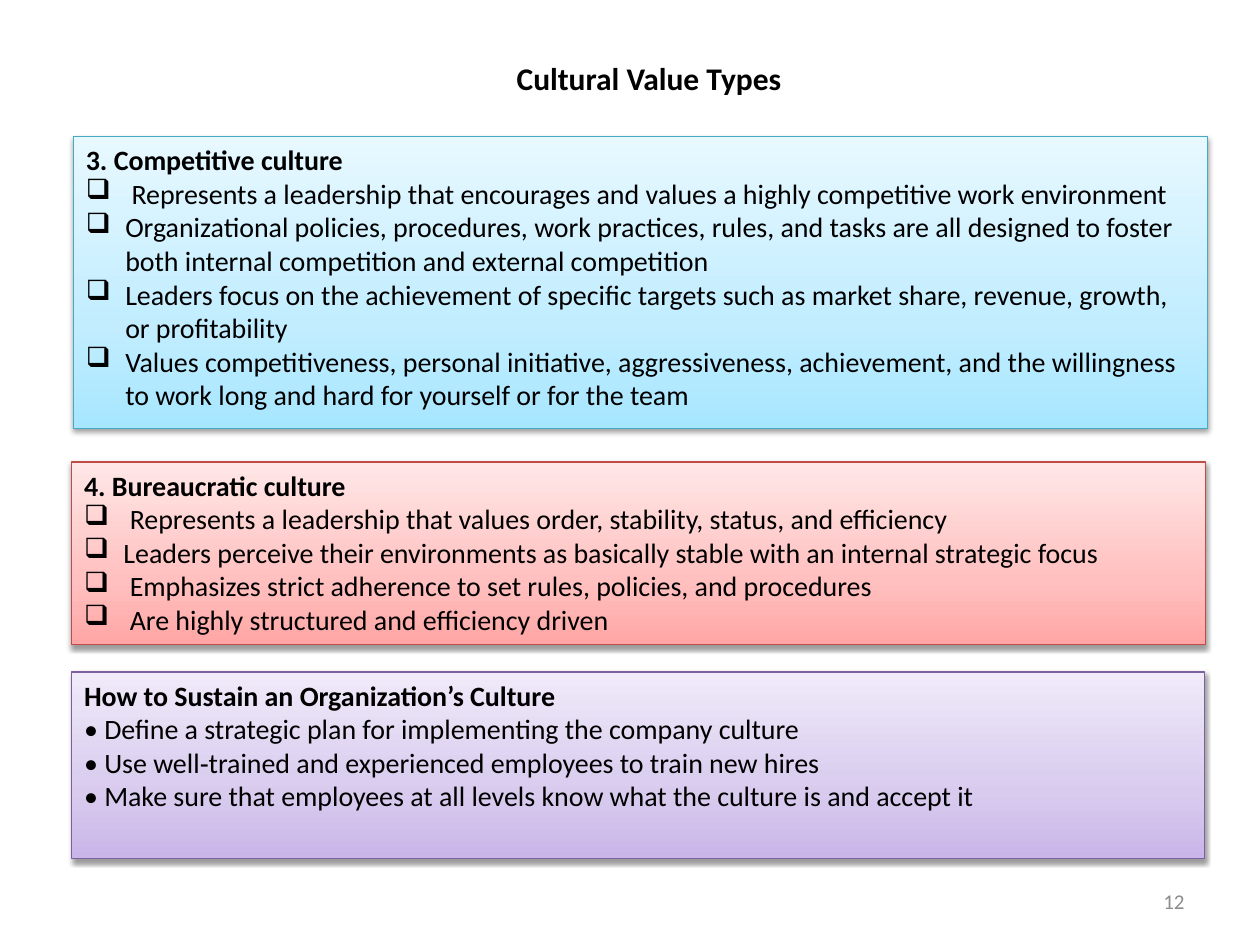
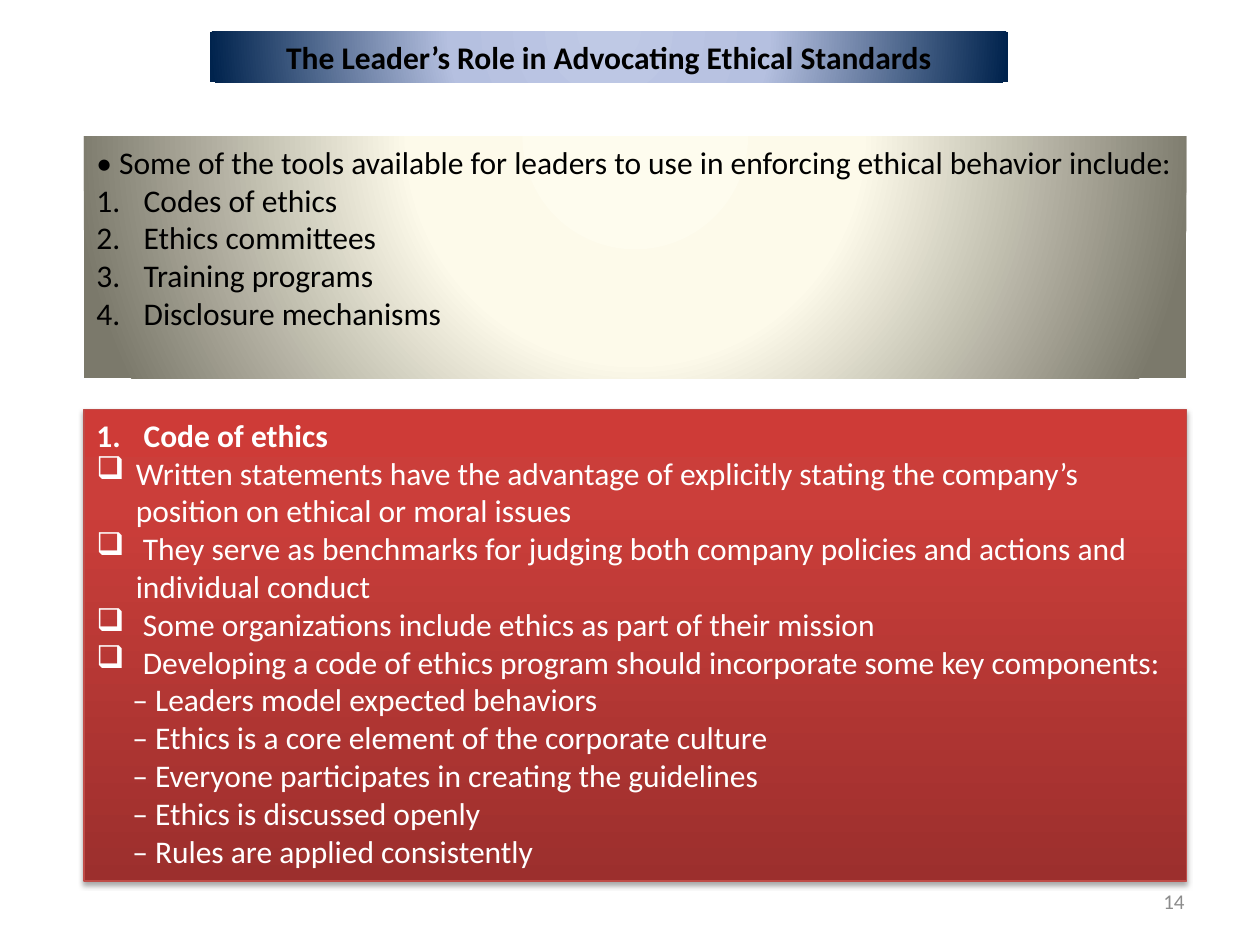
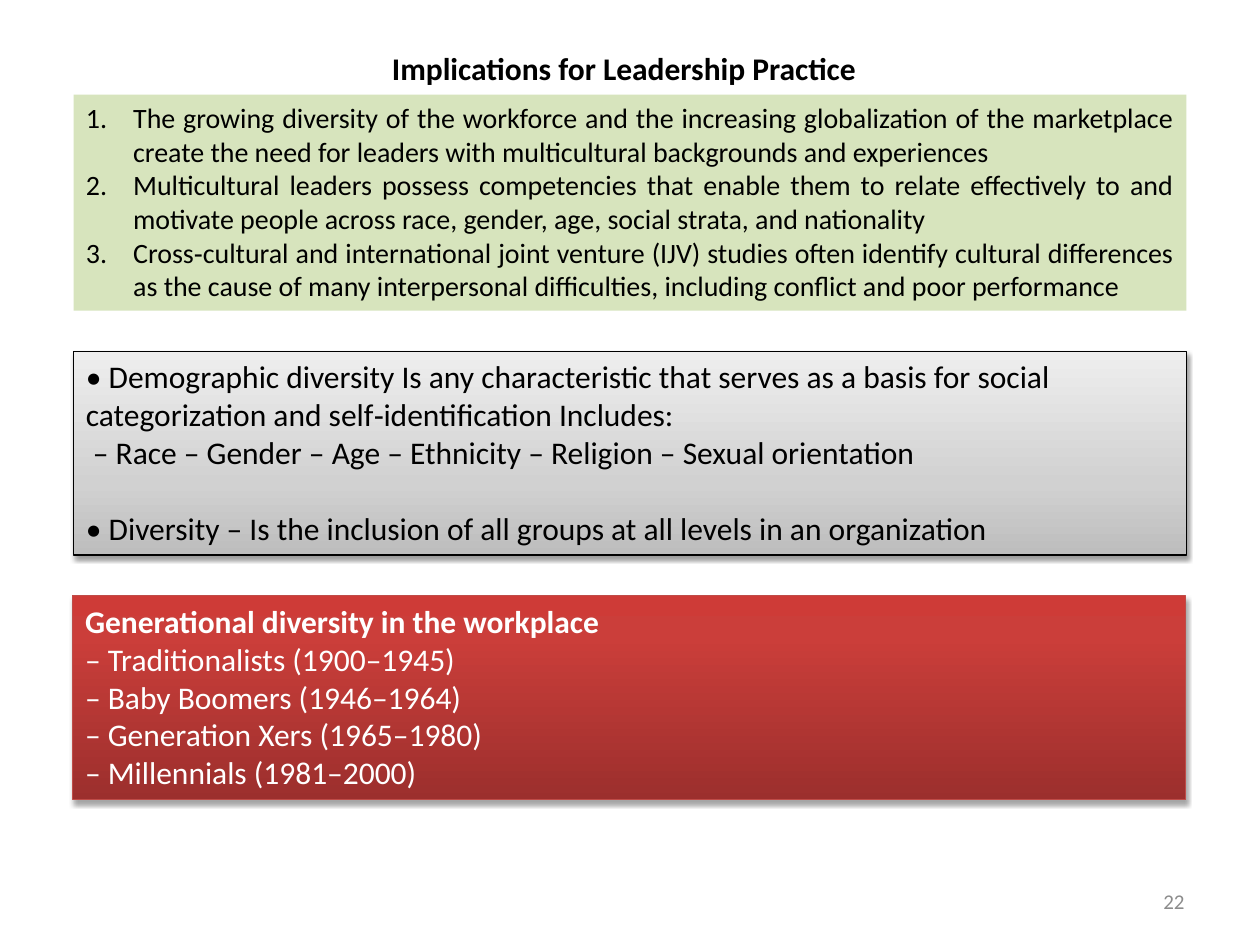
"""Build three slides on culture, ethics and diversity in leadership."""
import pptx
import pptx.util
import pptx.dml.color
import pptx.enum.shapes
import pptx.enum.text
import pptx.oxml
import pptx.oxml.ns

Pt = pptx.util.Pt
RGB = pptx.dml.color.RGBColor.from_string
ALIGN = pptx.enum.text.PP_ALIGN
ANCHOR = pptx.enum.text.MSO_ANCHOR
qn = pptx.oxml.ns.qn

THEME = {
    "font": "Calibri", "title": 18, "large": 18, "body": 16, "number": 12,
    "black": "000000", "white": "FFFFFF", "grey": "8C8C8C",
    "blue": {"stops": [(0, "A7E6FF"), (35, "C1EDFF"), (100, "E7F8FF")], "line": "46AAC5", "shadow": (38, 1.6)},
    "pink": {"stops": [(0, "FFA6A5"), (35, "FFC0BF"), (100, "FFE7E7")], "line": "BF4C48", "shadow": (38, 1.6)},
    "purple": {"stops": [(0, "C9B5E8"), (35, "D8CBEE"), (100, "F0EAF9")], "line": "7D60A0", "shadow": (38, 1.6)},
    "silver": {"stops": [(0, "BDBDBD"), (35, "D1D1D1"), (100, "EEEEEE")], "line": "000000", "shadow": (38, 1.6)},
    "red": {"stops": [(0, "9C2F2D"), (80, "CB3E3A"), (100, "CE3B37")], "line": "BF4C48", "shadow": (35, 1.8),
            "text": "FFFFFF"},
    "cream": {"stops": [(0, "FEFCEE"), (40, "FDFAEA"), (100, "7B796B")], "radial": True},
    "navy": {"stops": [(0, "BFC9E5"), (40, "B5C0E0"), (100, "00234D")], "radial": True},
    "green": {"solid": "D7E4BD"},
}

STYLES = {
    "head": {"bold": True},
    "plain": {},
    "check": {"bullet": '<a:buChar {} char="❑"/>', "left": 22.5, "hang": 22.5},
    "number": {"bullet": '<a:buAutoNum {} type="arabicPeriod"/>', "left": 27, "hang": 27},
    "numbered head": {"bullet": '<a:buAutoNum {} type="arabicPeriod"/>', "left": 27, "hang": 27, "bold": True},
    "sub": {"left": 20.5},
    "inset": {"left": 4},
    "apart": {"before": 22},
}

SLIDES = [
    {"title": "Cultural Value Types", "at": (288, 30.25, 174, 29), "number": "12", "panels": [
        {"look": "blue", "at": (42, 78, 648, 167), "size": "body", "text": [
            ("head", "3. Competitive culture"),
            ("check", " Represents a leadership that encourages and values a highly competitive work environment"),
            ("check", "Organizational policies, procedures, work practices, rules, and tasks are all designed "
                      "to foster both internal competition and external competition"),
            ("check", "Leaders focus on the achievement of specific targets such as market share, revenue, "
                      "growth, or profitability"),
            ("check", "Values competitiveness, personal initiative, aggressiveness, achievement, and the "
                      "willingness to work long and hard for yourself or for the team")]},
        {"look": "pink", "at": (41, 264, 648, 104.5), "size": "body", "text": [
            ("head", "4. Bureaucratic culture"),
            ("check", " Represents a leadership that values order, stability, status, and efficiency"),
            ("check", "Leaders perceive their environments as basically stable with an internal strategic focus"),
            ("check", " Emphasizes strict adherence to set rules, policies, and procedures"),
            ("check", " Are highly structured and efficiency driven")]},
        {"look": "purple", "at": (41, 384, 647.5, 106.5), "size": "body", "text": [
            ("head", "How to Sustain an Organization’s Culture"),
            ("plain", "• Define a strategic plan for implementing the company culture"),
            ("plain", "• Use well‐trained and experienced employees to train new hires"),
            ("plain", "• Make sure that employees at all levels know what the culture is and accept it")]},
    ]},
    {"title": "The Leader’s Role in Advocating Ethical Standards", "at": (120, 18, 456, 29), "number": "14",
     "look": "navy", "align": ALIGN.CENTER, "panels": [
        {"look": "cream", "at": (48, 78, 630, 138.25), "size": "large", "align": ALIGN.JUSTIFY, "text": [
            ("plain", "• Some of the tools available for leaders to use in enforcing ethical behavior include:"),
            ("number", "Codes of ethics"),
            ("number", "Ethics committees"),
            ("number", "Training programs"),
            ("number", "Disclosure mechanisms")]},
        {"look": "red", "at": (48, 234, 630, 269.5), "size": "large", "text": [
            ("numbered head", "Code of ethics"),
            ("check", "Written statements have the advantage of explicitly stating the company’s position on "
                      "ethical or moral issues"),
            ("check", " They serve as benchmarks for judging both company policies and actions and "
                      "individual conduct"),
            ("check", " Some organizations include ethics as part of their mission"),
            ("check", " Developing a code of ethics program should incorporate some key components:"),
            ("sub", "– Leaders model expected behaviors"),
            ("sub", "– Ethics is a core element of the corporate culture"),
            ("sub", "– Everyone participates in creating the guidelines"),
            ("sub", "– Ethics is discussed openly"),
            ("sub", "– Rules are applied consistently")]},
    ]},
    {"title": "Implications for Leadership Practice", "at": (216.75, 24.5, 290, 29), "number": "22", "panels": [
        {"look": "green", "at": (42, 54, 636, 123.5), "size": "body", "align": ALIGN.JUSTIFY, "text": [
            ("number", "The growing diversity of the workforce and the increasing globalization of the marketplace "
                       "create the need for leaders with multicultural backgrounds and experiences"),
            ("number", "Multicultural leaders possess competencies that enable them to relate effectively to and "
                       "motivate people across race, gender, age, social strata, and nationality"),
            ("number", "Cross‐cultural and international joint venture (IJV) studies often identify cultural "
                       "differences as the cause of many interpersonal difficulties, including conflict and "
                       "poor performance")]},
        {"look": "silver", "at": (42, 200.75, 636, 116.5), "size": "large", "text": [
            ("plain", "• Demographic diversity Is any characteristic that serves as a basis for social "
                      "categorization and self‐identification Includes:"),
            ("inset", "– Race – Gender – Age – Ethnicity – Religion – Sexual orientation"),
            ("apart", "• Diversity – Is the inclusion of all groups at all levels in an organization")]},
        {"look": "red", "at": (41.5, 340.5, 636, 116.5), "size": "large", "text": [
            ("head", "Generational diversity in the workplace"),
            ("plain", "– Traditionalists (1900–1945)"),
            ("plain", "– Baby Boomers (1946–1964)"),
            ("plain", "– Generation Xers (1965–1980)"),
            ("plain", "– Millennials (1981–2000)")]},
    ]},
]


def write(tf, text, size="body", color=THEME["black"], bold=False, align=ALIGN.LEFT,
          bullet=None, left=0, hang=0, before=0):
    p = tf.paragraphs[0] if not tf.text else tf.add_paragraph()
    pPr = p._p.get_or_add_pPr()
    pPr.set("marL", str(Pt(left)))
    pPr.set("indent", str(-Pt(hang)))
    if bullet:
        pPr.append(pptx.oxml.parse_xml(bullet.format(pptx.oxml.ns.nsdecls("a"))))
    p.alignment = align
    p.space_before = Pt(before)
    r = p.add_run()
    r.text = text
    r.font.name = THEME["font"]
    r.font.size = Pt(THEME[size])
    r.font.bold = bold
    r.font.color.rgb = RGB(color)


def paint(sp, look):
    spPr = sp._element.spPr
    ns = pptx.oxml.ns.nsdecls("a")
    if "solid" in look:
        sp.fill.solid()
        sp.fill.fore_color.rgb = RGB(look["solid"])
    else:
        sp.fill.gradient()
        stops = "".join(f'<a:gs pos="{pos * 1000}"><a:srgbClr val="{color}"/></a:gs>' for pos, color in look["stops"])
        course = '<a:lin ang="16200000" scaled="0"/>'
        if look.get("radial"):
            course = '<a:path path="circle"><a:fillToRect l="50000" t="-80000" r="50000" b="180000"/></a:path>'
        grad = pptx.oxml.parse_xml(f'<a:gradFill {ns} rotWithShape="1"><a:gsLst>{stops}</a:gsLst>{course}</a:gradFill>')
        spPr.replace(spPr.find(qn("a:gradFill")), grad)
    if "line" in look:
        sp.line.color.rgb = RGB(look["line"])
        sp.line.width = Pt(0.75)
    else:
        sp.line.fill.background()
    sp.shadow.inherit = False
    if "shadow" in look:
        alpha, dist = look["shadow"]
        spPr.find(qn("a:effectLst")).append(pptx.oxml.parse_xml(
            f'<a:outerShdw {ns} blurRad="{Pt(3.1)}" dist="{Pt(dist)}" dir="5400000" rotWithShape="0">'
            f'<a:srgbClr val="000000"><a:alpha val="{alpha * 1000}"/></a:srgbClr></a:outerShdw>'))


prs = pptx.Presentation()
prs.slide_width, prs.slide_height = Pt(720), Pt(540)

for page in SLIDES:
    s = prs.slides.add_slide(prs.slide_layouts[5])
    title = s.shapes.title
    title.left, title.top, title.width, title.height = map(Pt, page["at"])
    if "look" in page:
        paint(title, THEME[page["look"]])
    tf = title.text_frame
    tf.auto_size = pptx.enum.text.MSO_AUTO_SIZE.NONE
    tf.vertical_anchor = ANCHOR.TOP
    write(tf, page["title"], size="title", bold=True, align=page.get("align", ALIGN.LEFT))

    for panel in page["panels"]:
        look = THEME[panel["look"]]
        sp = s.shapes.add_shape(pptx.enum.shapes.MSO_SHAPE.RECTANGLE, *map(Pt, panel["at"]))
        paint(sp, look)
        tf = sp.text_frame
        tf.word_wrap = True
        tf.vertical_anchor = ANCHOR.TOP
        for style, text in panel["text"]:
            write(tf, text, size=panel["size"], color=look.get("text", THEME["black"]),
                  align=panel.get("align", ALIGN.LEFT), **STYLES[style])

    tf = s.shapes.add_textbox(Pt(516), Pt(500.5), Pt(168), Pt(28.75)).text_frame
    tf.word_wrap = True
    tf.vertical_anchor = ANCHOR.MIDDLE
    write(tf, page["number"], size="number", color=THEME["grey"], align=ALIGN.RIGHT)

prs.save("out.pptx")
